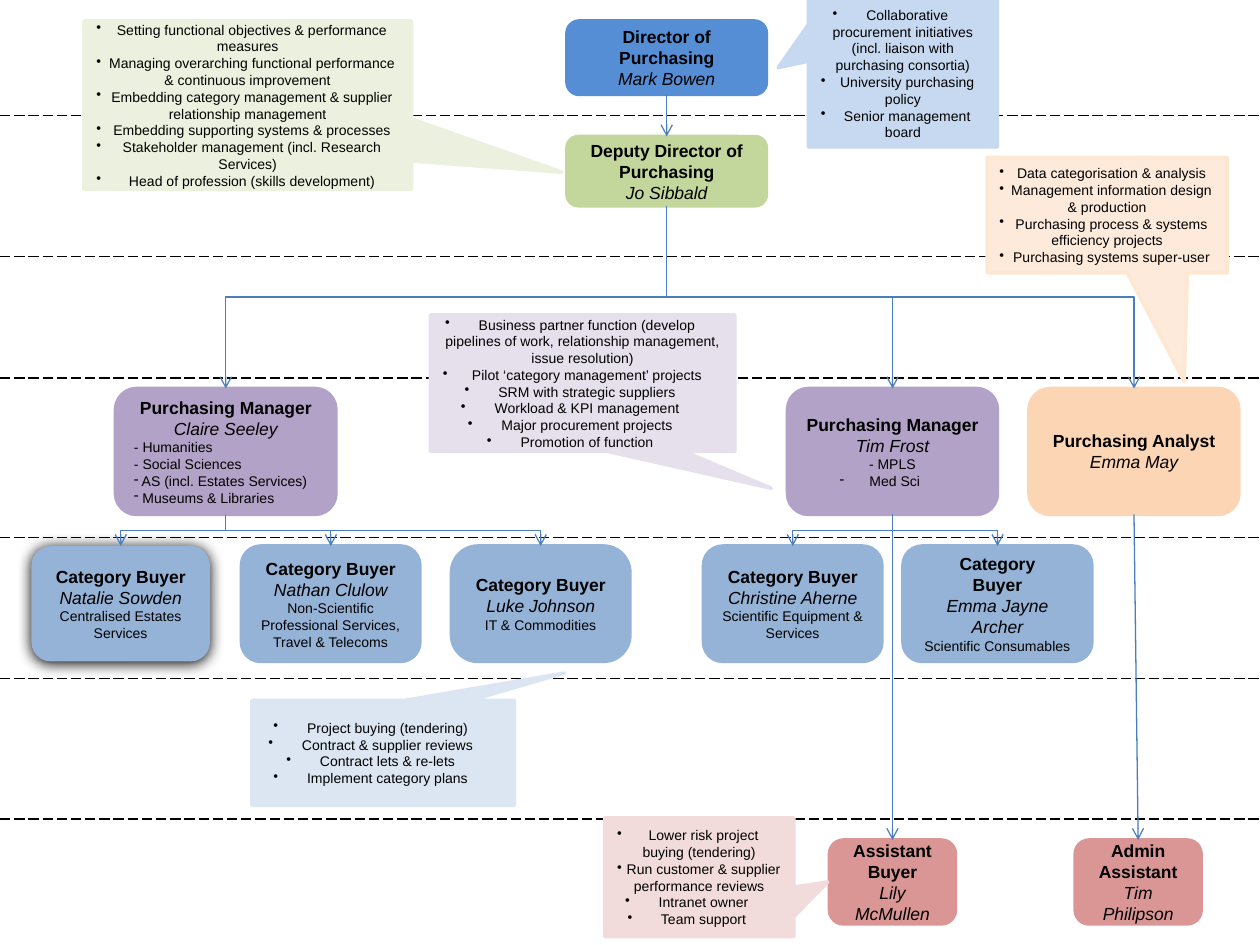
from lxml.etree import SubElement
from pptx import Presentation
from pptx.dml.color import RGBColor
from pptx.enum.dml import MSO_LINE
from pptx.enum.shapes import MSO_CONNECTOR as CONNECTOR, MSO_SHAPE as SHAPE
from pptx.enum.text import MSO_ANCHOR, PP_ALIGN
from pptx.oxml.ns import qn
from pptx.util import Inches, Pt

BLACK = RGBColor(0, 0, 0)
LINK = RGBColor(0x4B, 0x7E, 0xBC)
BLUE = RGBColor(0x55, 0x8E, 0xD5)
GREEN = RGBColor(0xC3, 0xD6, 0x9B)
PURPLE = RGBColor(0xB3, 0xA2, 0xC7)
ORANGE = RGBColor(0xFC, 0xD5, 0xB5)
STEEL = RGBColor(0x95, 0xB3, 0xD7)
RED = RGBColor(0xD9, 0x96, 0x94)
PALE_BLUE = RGBColor(0xC6, 0xD9, 0xF1)
PALE_GREEN = RGBColor(0xEB, 0xF1, 0xDE)
PALE_PURPLE = RGBColor(0xE6, 0xE0, 0xEC)
PALE_ORANGE = RGBColor(0xFD, 0xEA, 0xDA)
ORANGE_EDGE = RGBColor(0xFF, 0xE8, 0xD1)
PALE_STEEL = RGBColor(0xDC, 0xE6, 0xF2)
PALE_RED = RGBColor(0xF2, 0xDC, 0xDB)

COLUMNS, ROWS = 120, 90
CELL = Inches(10) / COLUMNS
DIVIDERS = [11, 24.4, 36, 51.2, 64.6, 78]
MANAGER_ROW, BUYER_ROW, ASSISTANT_ROW = (37, 12), (52, 11), (80, 8)

STYLES = {
    "title": dict(size=10, bold=True),
    "name": dict(size=10, italic=True),
    "detail": dict(size=8),
    "dash": dict(size=8, bullet="-"),
    "left": dict(size=8, align=PP_ALIGN.LEFT),
    "left dash": dict(size=8, align=PP_ALIGN.LEFT, bullet="-"),
    "duty": dict(size=8, bullet="•"),
}

POSTS = {
    "director": (54, 19, (2, 7), BLUE, ["Director of Purchasing"], "Mark Bowen", []),
    "deputy": (54, 19, (13, 6.6), GREEN, ["Deputy Director of Purchasing"], "Jo Sibbald", []),
    "humanities": (11, 21, MANAGER_ROW, PURPLE, ["Purchasing Manager"], "Claire Seeley", [
        ("left", "- Humanities"), ("left", "- Social Sciences"),
        ("left dash", " AS (incl. Estates Services)"), ("left dash", " Museums & Libraries")]),
    "science": (75, 20, MANAGER_ROW, PURPLE, ["Purchasing Manager"], "Tim Frost",
                [("detail", "- MPLS"), ("dash", "Med Sci")]),
    "analyst": (98, 20, MANAGER_ROW, ORANGE, ["Purchasing Analyst"], "Emma May", []),
    "estates": (3, 17, BUYER_ROW, STEEL, ["Category Buyer"], "Natalie Sowden",
                [("detail", "Centralised Estates Services")]),
    "travel": (23, 17, BUYER_ROW, STEEL, ["Category Buyer"], "Nathan Clulow",
               [("detail", "Non-Scientific Professional Services, Travel & Telecoms")]),
    "commodities": (43, 17, BUYER_ROW, STEEL, ["Category Buyer"], "Luke Johnson",
                    [("detail", "IT & Commodities")]),
    "equipment": (67, 17, BUYER_ROW, STEEL, ["Category Buyer"], "Christine Aherne",
                  [("detail", "Scientific Equipment & Services")]),
    "consumables": (86, 18, BUYER_ROW, STEEL, ["Category", "Buyer"], "Emma Jayne Archer",
                    [("detail", "Scientific Consumables")]),
    "assistant": (79, 12, ASSISTANT_ROW, RED, ["Assistant Buyer"], "Lily McMullen", []),
    "admin": (102.4, 12, ASSISTANT_ROW, RED, ["Admin Assistant"], "Tim Philipson", []),
}

CALLOUTS = [
    ((94, 15, 22.9, 11), (0.32, 1.44), PALE_ORANGE, ORANGE_EDGE, [
        "Data categorisation & analysis", "Management information design & production",
        "Purchasing process & systems efficiency projects", "Purchasing systems super-user"]),
    ((24, 66.7, 25, 10), (0.69, -0.76), PALE_STEEL, PALE_STEEL, [
        "Project buying (tendering)", "Contract & supplier reviews",
        "Contract lets & re-lets", "Implement category plans"]),
    ((57.6, 77.9, 18, 11.3), (0.68, 0.04), PALE_RED, PALE_RED, [
        "Lower risk project buying (tendering)", "Run customer & supplier performance reviews",
        "Intranet owner", "Team support"]),
    ((8, 2, 31.2, 16), (0.96, 0.4), PALE_GREEN, PALE_GREEN, [
        "Setting functional objectives & performance measures",
        "Managing overarching functional performance & continuous improvement",
        "Embedding category management & supplier relationship management",
        "Embedding supporting systems & processes",
        "Stakeholder management (incl. Research Services)",
        "Head of profession (skills development)"]),
    ((77, 0, 18, 14), (-0.66, -0.04), PALE_BLUE, PALE_BLUE, [
        "Collaborative procurement initiatives (incl. liaison with purchasing consortia)",
        "University purchasing policy", "Senior management board"]),
    ((41, 30, 29, 13), (0.62, 0.77), PALE_PURPLE, PALE_PURPLE, [
        "Business partner function (develop pipelines of work, relationship management, issue resolution)",
        "Pilot ‘category management’ projects", "SRM with strategic suppliers",
        "Workload & KPI management", "Major procurement projects", "Promotion of function"]),
]

STRAIGHT_LINKS = [("director", "deputy"), ("science", "assistant"), ("analyst", "admin")]
BRANCHES = {
    "deputy": ["humanities", "science", "analyst"],
    "humanities": ["estates", "travel", "commodities"],
    "science": ["equipment", "consumables"],
}


def write(shape, lines):
    frame = shape.text_frame
    frame.word_wrap = True
    frame.vertical_anchor = MSO_ANCHOR.MIDDLE
    frame.text = "\n".join(text for _, text in lines)
    for paragraph, (style_name, _) in zip(frame.paragraphs, lines):
        style = STYLES[style_name]
        paragraph.alignment = style.get("align", PP_ALIGN.CENTER)
        if "bullet" in style:
            properties = paragraph._p.get_or_add_pPr()
            SubElement(properties, qn("a:buChar"), char=style["bullet"])
        for run in paragraph.runs:
            font = run.font
            font.name, font.size = "Arial", Pt(style["size"])
            font.bold, font.italic = style.get("bold", False), style.get("italic", False)
            font.color.rgb = BLACK


def add_box(slide, kind, box, fill, edge, lines):
    shape = slide.shapes.add_shape(kind, *(round(value * CELL) for value in box))
    shape.shadow.inherit = False
    shape.fill.solid()
    shape.fill.fore_color.rgb = fill
    shape.line.color.rgb = edge
    shape.line.width = Pt(2)
    write(shape, lines)
    return shape


def add_line(slide, kind, ends, color):
    connector = slide.shapes.add_connector(kind, *ends)
    connector.line.color.rgb = color
    connector.line.width = Pt(0.75)
    SubElement(connector._element.spPr, qn("a:effectLst"))
    return connector


def add_link(slide, kind, parent, child):
    connector = add_line(slide, kind, (0, 0, 0, 0), LINK)
    connector.begin_connect(parent, 2)
    connector.end_connect(child, 0)
    SubElement(connector._element.spPr.find(qn("a:ln")), qn("a:tailEnd"), type="arrow")
    return connector


def add_branch(slide, parent, child):
    connector = add_link(slide, CONNECTOR.ELBOW, parent, child)
    start_x, start_y = connector.begin_x, connector.begin_y
    across, down = connector.end_x - start_x, connector.end_y - start_y
    connector.left = round(start_x + (across - down) / 2)
    connector.top = round(start_y + (down - abs(across)) / 2)
    connector.width, connector.height = down, abs(across)
    transform = connector._element.spPr.find(qn("a:xfrm"))
    transform.set("rot", str((270 if across > 0 else 90) * 60000))
    transform.set("flipH", "1" if across > 0 else "0")
    transform.set("flipV", "0")


def add_glow(shape):
    shape.line.fill.background()
    effects = shape._element.spPr.find(qn("a:effectLst"))
    shadow = SubElement(effects, qn("a:outerShdw"), blurRad=str(Pt(8.5)), dist=str(Pt(1)),
                        dir="5400000", algn="ctr", rotWithShape="0")
    SubElement(shadow, qn("a:srgbClr"), val=str(BLACK))


def main():
    presentation = Presentation()
    presentation.slide_width = round(COLUMNS * CELL)
    presentation.slide_height = round(ROWS * CELL)
    slide = presentation.slides.add_slide(presentation.slide_layouts[6])

    for row in DIVIDERS:
        y = round(row * CELL)
        divider = add_line(slide, CONNECTOR.STRAIGHT, (0, y, presentation.slide_width, y), BLACK)
        divider.line.dash_style = MSO_LINE.LONG_DASH

    posts = {}
    for key, (left, width, (top, height), color, titles, name, details) in POSTS.items():
        lines = [("title", title) for title in titles] + [("name", name)] + details
        posts[key] = add_box(slide, SHAPE.ROUNDED_RECTANGLE, (left, top, width, height),
                             color, color, lines)
    posts["commodities"].adjustments[0] = 0.23
    add_glow(posts["estates"])

    for box, tip, fill, edge, duties in CALLOUTS:
        callout = add_box(slide, SHAPE.RECTANGULAR_CALLOUT, box, fill, edge,
                          [("duty", " " + duty) for duty in duties])
        callout.adjustments[0], callout.adjustments[1] = tip

    for parent, child in STRAIGHT_LINKS:
        add_link(slide, CONNECTOR.STRAIGHT, posts[parent], posts[child])
    for parent, children in BRANCHES.items():
        for child in children:
            add_branch(slide, posts[parent], posts[child])

    presentation.save("out.pptx")


if __name__ == "__main__":
    main()
